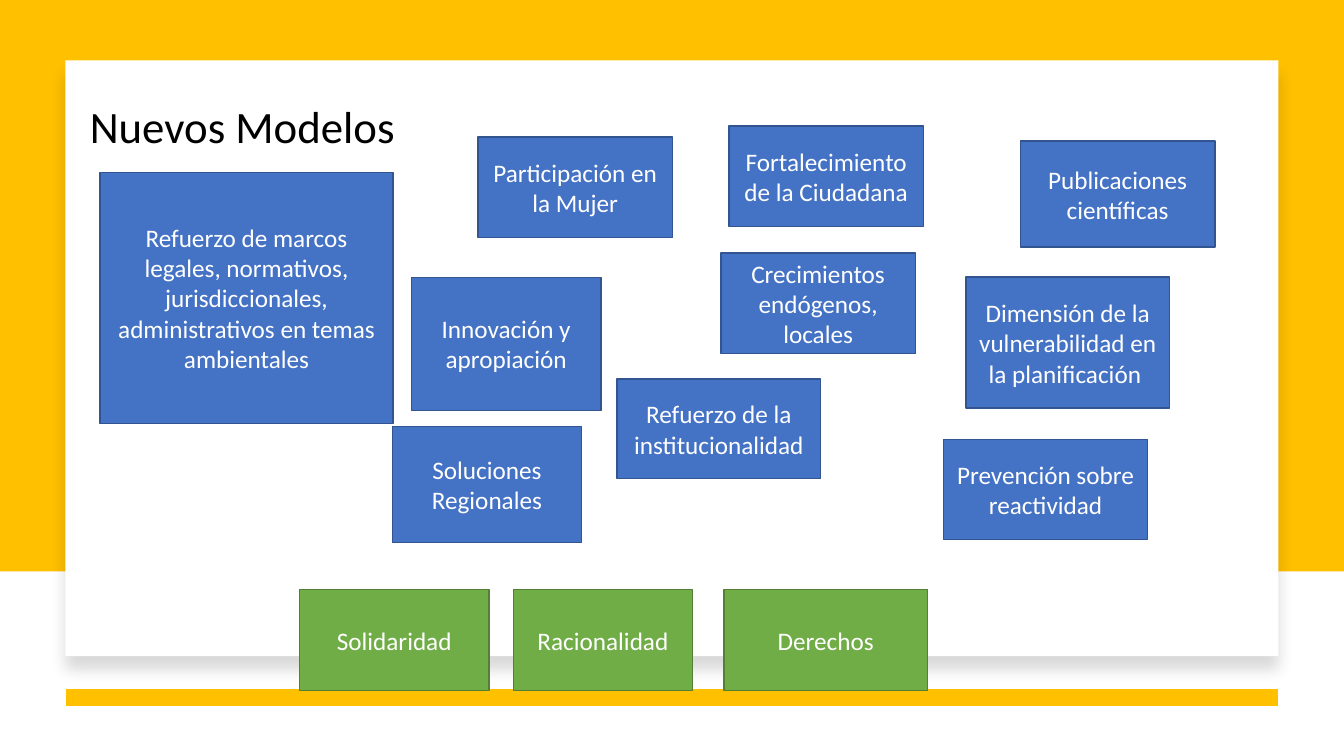
import pptx
import pptx.util
import pptx.dml.color
import pptx.enum.shapes
import pptx.enum.text
import pptx.oxml
import pptx.oxml.ns
import lxml.etree

WIDTH, HEIGHT = 13.33, 7.5
MARGIN = 0.65
PANEL_TOP, PANEL_HEIGHT = 0.6, 5.91
BAND_HEIGHT = 5.67
STRIPE_Y = 6.92
VALUES_TOP, VALUES_HEIGHT = 5.85, 1

COLORS = {
    "band": "FFC000",
    "panel": "FFFFFF",
    "model": "4472C4",
    "model_line": "325491",
    "value": "70AD47",
    "value_line": "538035",
    "title": "000000",
    "label": "FFFFFF",
}

TITLE = ("Nuevos Modelos", 0.79, 0.93, 3.86, 0.64)

MODELS = [
    ("Refuerzo de marcos legales, normativos, jurisdiccionales, "
     "administrativos en temas ambientales", 0.99, 1.71, 2.91, 2.49),
    ("Participación en la Mujer", 4.74, 1.36, 1.93, 1),
    ("Innovación y apropiación", 4.08, 2.75, 1.88, 1.32),
    ("Publicaciones científicas", 10.12, 1.4, 1.93, 1.05),
    ("Refuerzo de la institucionalidad", 6.12, 3.76, 2.02, 0.99),
    ("Crecimientos endógenos, locales", 7.15, 2.51, 1.93, 1),
    ("Dimensión de la vulnerabilidad en la planificación ", 9.58, 2.75, 2.02, 1.3),
    ("Fortalecimiento de la Ciudadana", 7.23, 1.25, 1.93, 1),
    ("Soluciones Regionales", 3.89, 4.23, 1.88, 1.15),
    ("Prevención sobre reactividad", 9.36, 4.36, 2.02, 0.99),
]

VALUES = [
    ("Solidaridad", 2.97, 1.88),
    ("Racionalidad", 5.09, 1.78),
    ("Derechos", 7.18, 2.02),
]

SHADOW = (
    '<a:effectLst xmlns:a="http://schemas.openxmlformats.org/drawingml/2006/main">'
    '<a:outerShdw blurRad="{blur}" dist="{distance}" dir="5400000" algn="t" rotWithShape="0">'
    '<a:srgbClr val="000000"><a:alpha val="15000"/></a:srgbClr>'
    '</a:outerShdw></a:effectLst>'
)


def color(name):
    return pptx.dml.color.RGBColor.from_string(COLORS[name])


def inches(*lengths):
    return [pptx.util.Inches(length) for length in lengths]


def add_box(page, left, top, width, height, fill, line=None):
    box = page.shapes.add_shape(
        pptx.enum.shapes.MSO_SHAPE.RECTANGLE, *inches(left, top, width, height))
    box.shadow.inherit = False
    box.fill.solid()
    box.fill.fore_color.rgb = color(fill)
    if line:
        box.line.color.rgb = color(line)
        box.line.width = pptx.util.Pt(1)
    else:
        box.line.fill.background()
    return box


def write(box, text, size, ink, align, anchor):
    frame = box.text_frame
    frame.text = text
    frame.word_wrap = True
    frame.vertical_anchor = anchor
    para = frame.paragraphs[0]
    para.alignment = align
    para.line_spacing = 1.0
    span = para.runs[0]
    span.font.size = pptx.util.Pt(size)
    span.font.name = "Calibri"
    span.font.color.rgb = color(ink)


def add_card(page, text, left, top, width, height, kind):
    box = add_box(page, left, top, width, height, kind, kind + "_line")
    write(box, text, 18, "label", pptx.enum.text.PP_ALIGN.CENTER,
          pptx.enum.text.MSO_ANCHOR.MIDDLE)


def add_background(page):
    right = WIDTH - MARGIN
    add_box(page, 0, 0, WIDTH, BAND_HEIGHT, "band")
    panel = add_box(page, MARGIN, PANEL_TOP, right - MARGIN, PANEL_HEIGHT, "panel")
    properties = panel._element.spPr
    properties.remove(properties.find(pptx.oxml.ns.qn("a:effectLst")))
    properties.append(pptx.oxml.parse_xml(SHADOW.format(
        blur=pptx.util.Pt(11), distance=pptx.util.Pt(10))))

    stripe = page.shapes.add_connector(
        pptx.enum.shapes.MSO_CONNECTOR.STRAIGHT,
        *inches(right, STRIPE_Y, MARGIN, STRIPE_Y))
    stripe.line.color.rgb = color("band")
    stripe.line.width = pptx.util.Pt(12)
    lxml.etree.SubElement(stripe._element.spPr, pptx.oxml.ns.qn("a:effectLst"))


def add_title(page):
    text, *place = TITLE
    title = page.shapes.title
    title.left, title.top, title.width, title.height = inches(*place)
    write(title, text, 32, "title", pptx.enum.text.PP_ALIGN.LEFT,
          pptx.enum.text.MSO_ANCHOR.TOP)
    title.text_frame.auto_size = pptx.enum.text.MSO_AUTO_SIZE.NONE
    page.shapes._spTree.append(title._element)


def main():
    deck = pptx.Presentation()
    deck.slide_width, deck.slide_height = inches(WIDTH, HEIGHT)
    page = deck.slides.add_slide(deck.slide_layouts.get_by_name("Title Only"))
    add_background(page)
    for text, *place in MODELS:
        add_card(page, text, *place, "model")
    for text, left, width in VALUES:
        add_card(page, text, left, VALUES_TOP, width, VALUES_HEIGHT, "value")
    add_title(page)
    deck.save("out.pptx")


if __name__ == "__main__":
    main()
